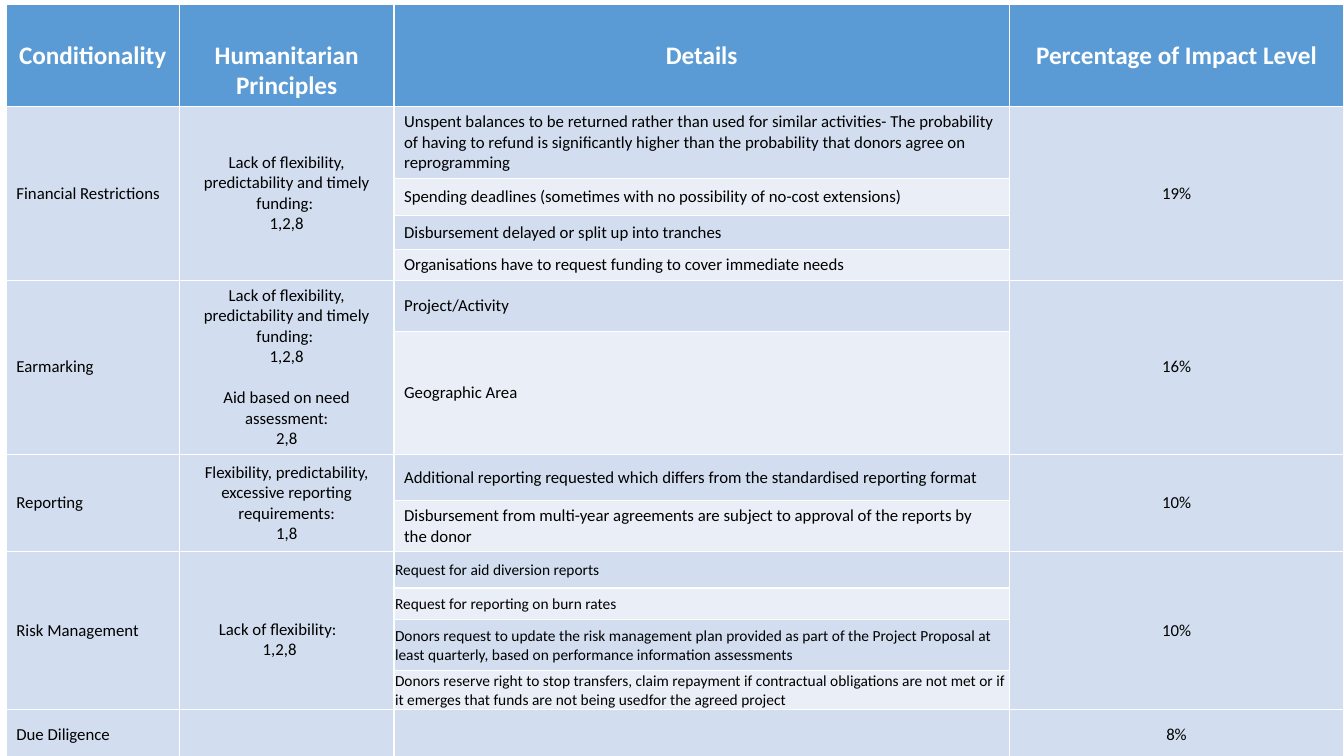
from pptx import Presentation
from pptx.dml.color import RGBColor
from pptx.enum.text import MSO_ANCHOR as Anchor, PP_ALIGN as Align
from pptx.util import Pt

WHITE = RGBColor(0xFF, 0xFF, 0xFF)
BLACK = RGBColor(0, 0, 0)
HEADER_BLUE = RGBColor(0x5B, 0x9B, 0xD5)
BAND_DARK = RGBColor(0xD2, 0xDE, 0xEF)
BAND_LIGHT = RGBColor(0xEA, 0xEF, 0xF7)

HEADERS = ["Conditionality", "Humanitarian Principles", "Details", "Percentage of Impact Level"]
FLEXIBILITY = "Lack of flexibility, predictability and timely funding: \v1,2,8"
RISK_PRINCIPLES = ["Lack of flexibility: ", "1,2,8"]
GROUPS = [
    ("Financial Restrictions", [FLEXIBILITY], "19%", 12, [
        "Unspent balances to be returned rather than used for similar activities- "
        "The probability of having to refund is significantly higher than the "
        "probability that donors agree on reprogramming",
        "Spending deadlines (sometimes with no possibility of no-cost extensions)",
        "Disbursement delayed or split up into tranches",
        "Organisations have to request funding to cover immediate needs",
    ]),
    ("Earmarking", [FLEXIBILITY, "Aid based on need assessment:\v2,8"], "16%", 12, [
        "Project/Activity",
        "Geographic Area",
    ]),
    ("Reporting", ["Flexibility, predictability, excessive reporting requirements:\v1,8"], "10%", 12, [
        "Additional reporting requested which differs from the standardised reporting format",
        "Disbursement from multi-year agreements are subject to approval of the reports by the donor",
    ]),
    ("Risk Management", [], "10%", 11, [
        "Request for aid diversion reports",
        "Request for reporting on burn rates",
        "Donors request to update the risk management plan provided as part of the "
        "Project Proposal at least quarterly, based on performance information assessments",
        "Donors reserve right to stop transfers, claim repayment if contractual obligations "
        "are not met or if it emerges that funds are not being usedfor the agreed project",
    ]),
    ("Due Diligence", [], "8%", 12, [""]),
]
COLUMN_WIDTHS = [123.6, 153.4, 439.4, 239]
ROW_HEIGHTS = [72.7, 51.1, 26.6, 24.5, 21.6, 36.7, 87.1, 33.1, 36.7, 25.9, 22.3, 36.7, 27.4, 35.3]
TABLE_LEFT, TABLE_TOP = 4.5, 3
HEADER_DROP = 25.6
BLANK_LINE = 14.6


def write(frame, paragraphs, size=12, color=BLACK, bold=False, align=Align.LEFT, gap=0):
    for index, text in enumerate(paragraphs):
        para = frame.paragraphs[0] if index == 0 else frame.add_paragraph()
        para.text = text
        para.alignment = align
        if index and gap:
            para.space_before = Pt(gap)
        for span in para.runs:
            span.font.name = "Calibri"
            span.font.size = Pt(size)
            span.font.bold = bold
            span.font.color.rgb = color


def paint(cell, color):
    cell.fill.solid()
    cell.fill.fore_color.rgb = color


deck = Presentation()
deck.slide_width, deck.slide_height = Pt(960), Pt(540)
page = deck.slides.add_slide(deck.slide_layouts[6])

table = page.shapes.add_table(
    len(ROW_HEIGHTS), len(COLUMN_WIDTHS), Pt(TABLE_LEFT), Pt(TABLE_TOP),
    Pt(sum(COLUMN_WIDTHS)), Pt(sum(ROW_HEIGHTS))).table
for column, width in zip(table.columns, COLUMN_WIDTHS):
    column.width = Pt(width)
for row, height in zip(table.rows, ROW_HEIGHTS):
    row.height = Pt(height)

for column, title in enumerate(HEADERS):
    cell = table.cell(0, column)
    paint(cell, HEADER_BLUE)
    cell.margin_top = Pt(HEADER_DROP)
    write(cell.text_frame, [title], size=18, color=WHITE, bold=True, align=Align.CENTER)

first = 1
for name, principles, impact, detail_size, details in GROUPS:
    last = first + len(details) - 1
    summary = [(0, [name], Align.LEFT), (1, principles, Align.CENTER), (3, [impact], Align.CENTER)]
    for column, paragraphs, align in summary:
        cell = table.cell(first, column)
        if last > first:
            cell.merge(table.cell(last, column))
        paint(cell, BAND_DARK)
        cell.vertical_anchor = Anchor.MIDDLE
        write(cell.text_frame, paragraphs, align=align, gap=BLANK_LINE)
    for index, detail in enumerate(details):
        cell = table.cell(first + index, 2)
        paint(cell, BAND_LIGHT if index % 2 else BAND_DARK)
        cell.vertical_anchor = Anchor.MIDDLE
        if detail_size == 11:
            cell.margin_left = cell.margin_top = cell.margin_right = Pt(0.7)
            cell.margin_bottom = Pt(0)
        write(cell.text_frame, [detail], size=detail_size)
    first = last + 1

box = page.shapes.add_textbox(Pt(96.5), Pt(438.5), Pt(206.6), Pt(36))
box.text_frame.word_wrap = True
write(box.text_frame, RISK_PRINCIPLES, align=Align.CENTER)

deck.save("out.pptx")
